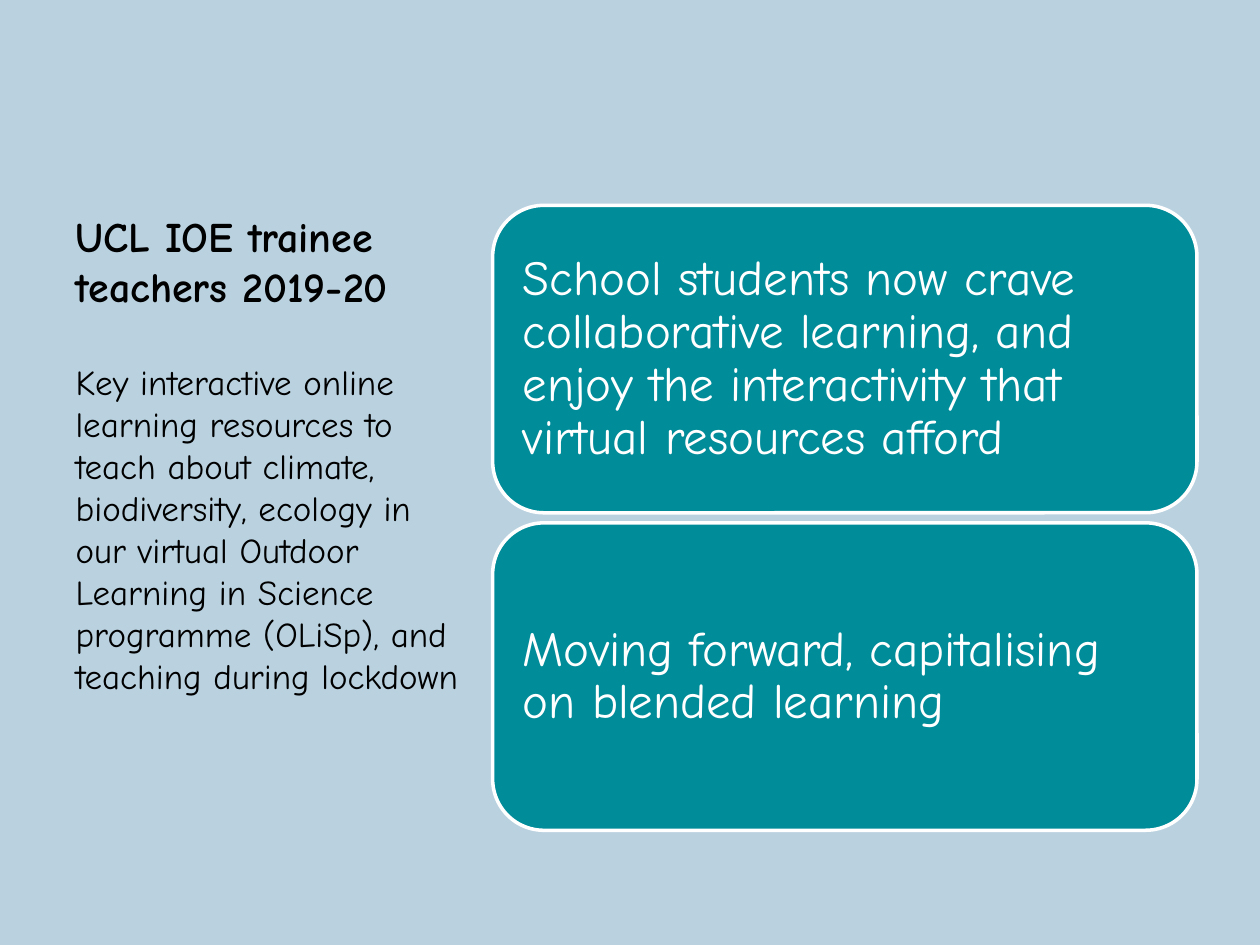
from dataclasses import dataclass

from pptx import Presentation
from pptx.dml.color import RGBColor
from pptx.enum.shapes import MSO_SHAPE as Shape
from pptx.enum.text import MSO_ANCHOR as Anchor, MSO_AUTO_SIZE as AutoSize, PP_ALIGN as Align
from pptx.oxml.xmlchemy import OxmlElement
from pptx.slide import Slide
from pptx.util import Inches, Pt


@dataclass(frozen=True)
class Theme:
    font: str = "Comic Neue"
    background: RGBColor = RGBColor.from_string("BAD2E0")
    panel: RGBColor = RGBColor.from_string("008C99")
    light: RGBColor = RGBColor.from_string("FFFFFF")
    dark: RGBColor = RGBColor.from_string("000000")
    title_size: int = 24
    body_size: int = 20
    panel_size: int = 28


@dataclass(frozen=True)
class Box:
    left: float
    top: float
    width: float
    height: float

    def lengths(self) -> tuple:
        return tuple(map(Inches, (self.left, self.top, self.width, self.height)))


@dataclass(frozen=True)
class Panel:
    text: str
    box: Box


THEME = Theme()
PANEL_TOP, PANEL_HEIGHT, PANEL_PITCH = 1.63, 2.44, 2.52
HEADING = "UCL IOE trainee teachers 2019-20"
SUMMARY = (
    "Key interactive online learning resources to teach about climate, "
    "biodiversity, ecology in our virtual Outdoor Learning in Science "
    "programme (OLiSp), and teaching during lockdown"
)
FINDINGS = (
    "School students now crave collaborative learning, and enjoy the "
    "interactivity that virtual resources afford",
    "Moving forward, capitalising on blended learning",
)


def write(shape, text: str, size: int, color: RGBColor, anchor: Anchor, bold: bool = False):
    frame = shape.text_frame
    frame.text = text
    frame.word_wrap = True
    frame.auto_size = AutoSize.NONE
    frame.vertical_anchor = anchor
    paragraph = frame.paragraphs[0]
    paragraph.alignment = Align.LEFT
    paragraph.space_before = Pt(0)
    font = paragraph.font
    font.name, font.size, font.bold = THEME.font, Pt(size), bold
    font.color.rgb = color
    return paragraph


def place(shape, box: Box) -> None:
    shape.left, shape.top, shape.width, shape.height = box.lengths()


def remove_bullet(paragraph) -> None:
    properties = paragraph._p.get_or_add_pPr()
    properties.set("marL", "0")
    properties.set("indent", "0")
    properties.insert_element_before(OxmlElement("a:buNone"), "a:tabLst", "a:defRPr", "a:extLst")


def draw_panel(slide: Slide, panel: Panel) -> None:
    shape = slide.shapes.add_shape(Shape.ROUNDED_RECTANGLE, *panel.box.lengths())
    shape.shadow.inherit = False
    shape.fill.solid()
    shape.fill.fore_color.rgb = THEME.panel
    shape.line.color.rgb = THEME.light
    shape.line.width = Pt(2)
    paragraph = write(shape, panel.text, THEME.panel_size, THEME.light, Anchor.MIDDLE)
    paragraph.line_spacing = 0.9
    frame = shape.text_frame
    frame.margin_left = frame.margin_right = Inches(0.12)
    frame.margin_top = frame.margin_bottom = Inches(0.12)


def main() -> None:
    deck = Presentation()
    deck.slide_width, deck.slide_height = Inches(10), Inches(7.5)
    slide = deck.slides.add_slide(deck.slide_layouts[1])
    slide.background.fill.solid()
    slide.background.fill.fore_color.rgb = THEME.background

    heading, summary = slide.shapes.title, slide.placeholders[1]
    place(heading, Box(0.5, 1.52, 3.29, 1))
    write(heading, HEADING, THEME.title_size, THEME.dark, Anchor.BOTTOM, bold=True)
    place(summary, Box(0.5, 2.81, 3.29, 3.89))
    remove_bullet(write(summary, SUMMARY, THEME.body_size, THEME.dark, Anchor.TOP))

    for row, finding in enumerate(FINDINGS):
        top = PANEL_TOP + row * PANEL_PITCH
        draw_panel(slide, Panel(finding, Box(3.91, top, 5.59, PANEL_HEIGHT)))

    deck.save("out.pptx")


if __name__ == "__main__":
    main()
